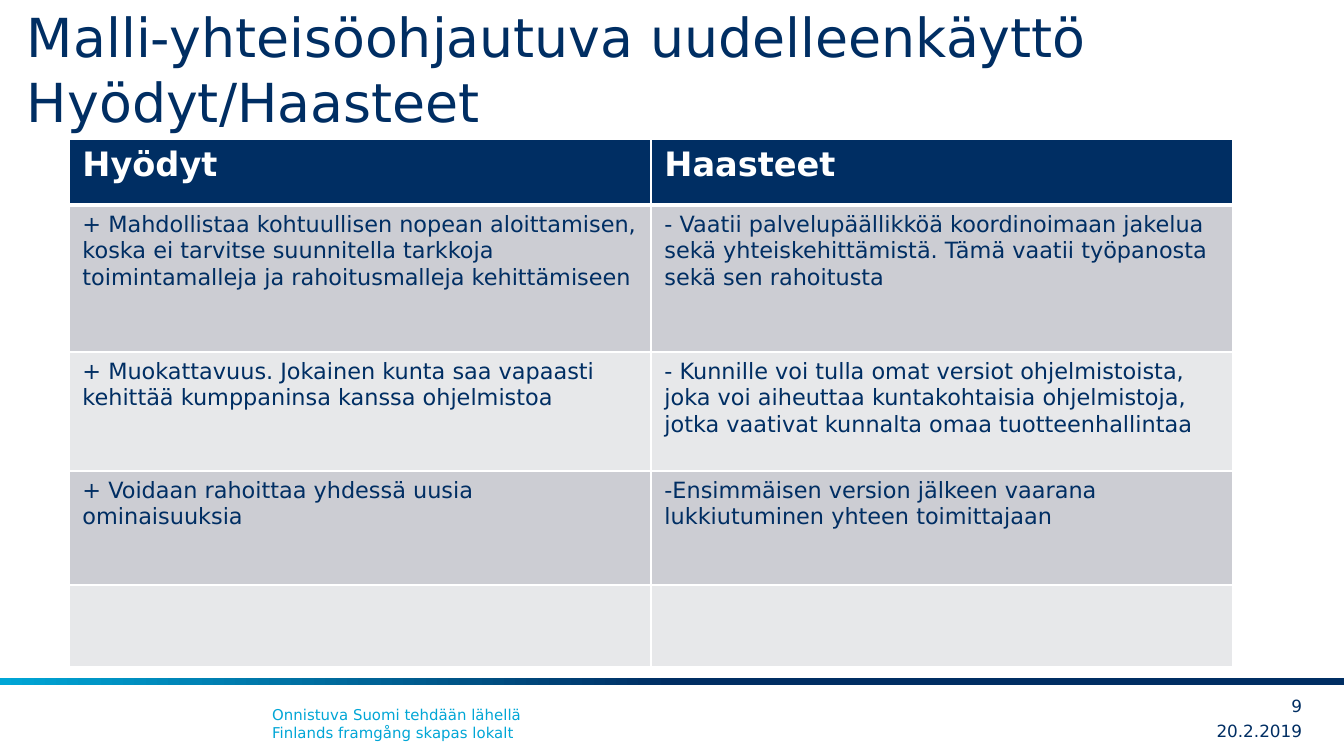
import pptx
import pptx.util
import pptx.dml.color
import pptx.enum.shapes
import pptx.enum.text
import pptx.oxml.ns
from lxml import etree

PX = 914400 / 134.4  # EMU in one px
FONT = "DejaVu Sans"
RGB = pptx.dml.color.RGBColor
NAVY = RGB(0x00, 0x2E, 0x63)
CYAN = RGB(0x00, 0xA6, 0xD6)
WHITE = RGB(0xFF, 0xFF, 0xFF)
BAND_DARK = RGB(0xCC, 0xCD, 0xD3)
BAND_LIGHT = RGB(0xE7, 0xE8, 0xEA)
ANCHOR = pptx.enum.text.MSO_ANCHOR
ALIGN = pptx.enum.text.PP_ALIGN

ROW_HEIGHTS = [66, 147, 119, 114, 82]
COMPARISON = [
    ("Hyödyt", "Haasteet"),
    ("+ Mahdollistaa kohtuullisen nopean aloittamisen, koska ei tarvitse "
     "suunnitella tarkkoja toimintamalleja ja rahoitusmalleja kehittämiseen",
     "- Vaatii palvelupäällikköä koordinoimaan jakelua sekä yhteiskehittämistä. "
     "Tämä vaatii työpanosta sekä sen rahoitusta"),
    ("+ Muokattavuus. Jokainen kunta saa vapaasti kehittää kumppaninsa kanssa "
     "ohjelmistoa",
     "- Kunnille voi tulla omat versiot ohjelmistoista, joka voi aiheuttaa "
     "kuntakohtaisia ohjelmistoja, jotka vaativat kunnalta omaa "
     "tuotteenhallintaa"),
    ("+ Voidaan rahoittaa yhdessä uusia ominaisuuksia",
     "-Ensimmäisen version jälkeen vaarana lukkiutuminen yhteen toimittajaan"),
    ("", ""),
]


def px(length):
    return pptx.util.Emu(round(length * PX))


def box(*lengths):
    return [px(length) for length in lengths]


def write(frame, text, size, color, bold=False, align=ALIGN.LEFT):
    paragraph = frame.paragraphs[0]
    paragraph.text = text
    paragraph.alignment = align
    font = paragraph.font
    font.name, font.size, font.bold = FONT, pptx.util.Pt(size), bold
    font.color.rgb = color


def set_margins(frame, left, top, right, bottom):
    frame.margin_left, frame.margin_top = px(left), px(top)
    frame.margin_right, frame.margin_bottom = px(right), px(bottom)


def add_title(slide, text):
    title = slide.shapes.title
    title.left, title.top, title.width, title.height = box(27, 44, 1317, 96)
    frame = title.text_frame
    frame.word_wrap = True
    frame.auto_size = pptx.enum.text.MSO_AUTO_SIZE.NONE
    frame.vertical_anchor = ANCHOR.BOTTOM
    set_margins(frame, 0, 7, 0, 7)
    write(frame, text, 28.8, NAVY)


def add_footer_bar(slide):
    bar = slide.shapes.add_shape(
        pptx.enum.shapes.MSO_SHAPE.RECTANGLE, *box(0, 678, 1344, 7))
    bar.shadow.inherit = False
    bar.line.fill.background()
    bar.fill.gradient()
    bar.fill.gradient_angle = 180
    stops = bar.fill.gradient_stops
    for stop, position, color in zip(stops, (0.5, 1), (NAVY, CYAN)):
        stop.position = position
        stop.color.rgb = color


def add_slogan(slide, text):
    frame = slide.shapes.add_textbox(*box(259, 699, 879, 50)).text_frame
    frame.word_wrap = True
    write(frame, text, 8, CYAN)


def add_footer_field(slide, text, left, top, width):
    frame = slide.shapes.add_textbox(*box(left, top, width, 30)).text_frame
    frame.word_wrap = True
    frame.vertical_anchor = ANCHOR.MIDDLE
    set_margins(frame, 0, 0, 0, 0)
    write(frame, text, 9, NAVY, align=ALIGN.RIGHT)


def add_cell_borders(cell, top, bottom):
    properties = cell._tc.get_or_add_tcPr()
    qn = pptx.oxml.ns.qn
    for side, points in (("L", 1), ("R", 1), ("T", top), ("B", bottom)):
        line = etree.SubElement(properties, qn(f"a:ln{side}"),
                                w=str(pptx.util.Pt(points)))
        fill = etree.SubElement(line, qn("a:solidFill"))
        etree.SubElement(fill, qn("a:srgbClr"), val=str(WHITE))


def add_comparison(slide):
    table = slide.shapes.add_table(
        len(COMPARISON), 2, *box(69, 139, 1164, sum(ROW_HEIGHTS))).table
    for row, height in zip(table.rows, ROW_HEIGHTS):
        row.height = px(height)
    for r, texts in enumerate(COMPARISON):
        header = r == 0
        band = BAND_DARK if r % 2 else BAND_LIGHT
        for c, text in enumerate(texts):
            cell = table.cell(r, c)
            # The heavier rule lies between the header and the first row
            add_cell_borders(cell, 3 if r == 1 else 1, 3 if header else 1)
            cell.fill.solid()
            cell.fill.fore_color.rgb = NAVY if header else band
            write(cell.text_frame, text, 18 if header else 12,
                  WHITE if header else NAVY, bold=header)


def main():
    deck = pptx.Presentation()
    deck.slide_width, deck.slide_height = box(1344, 756)
    slide = deck.slides.add_slide(deck.slide_layouts[5])

    # Footer band
    add_footer_bar(slide)
    add_slogan(slide, "Onnistuva Suomi tehdään lähellä\vFinlands framgång skapas lokalt")

    # Title and benefits against challenges
    add_title(slide, "Malli-yhteisöohjautuva uudelleenkäyttö Hyödyt/Haasteet")
    add_comparison(slide)

    # Date and page number
    add_footer_field(slide, "20.2.2019", 1169, 716, 133)
    add_footer_field(slide, "9", 1244, 691, 58)
    deck.save("out.pptx")


if __name__ == "__main__":
    main()
